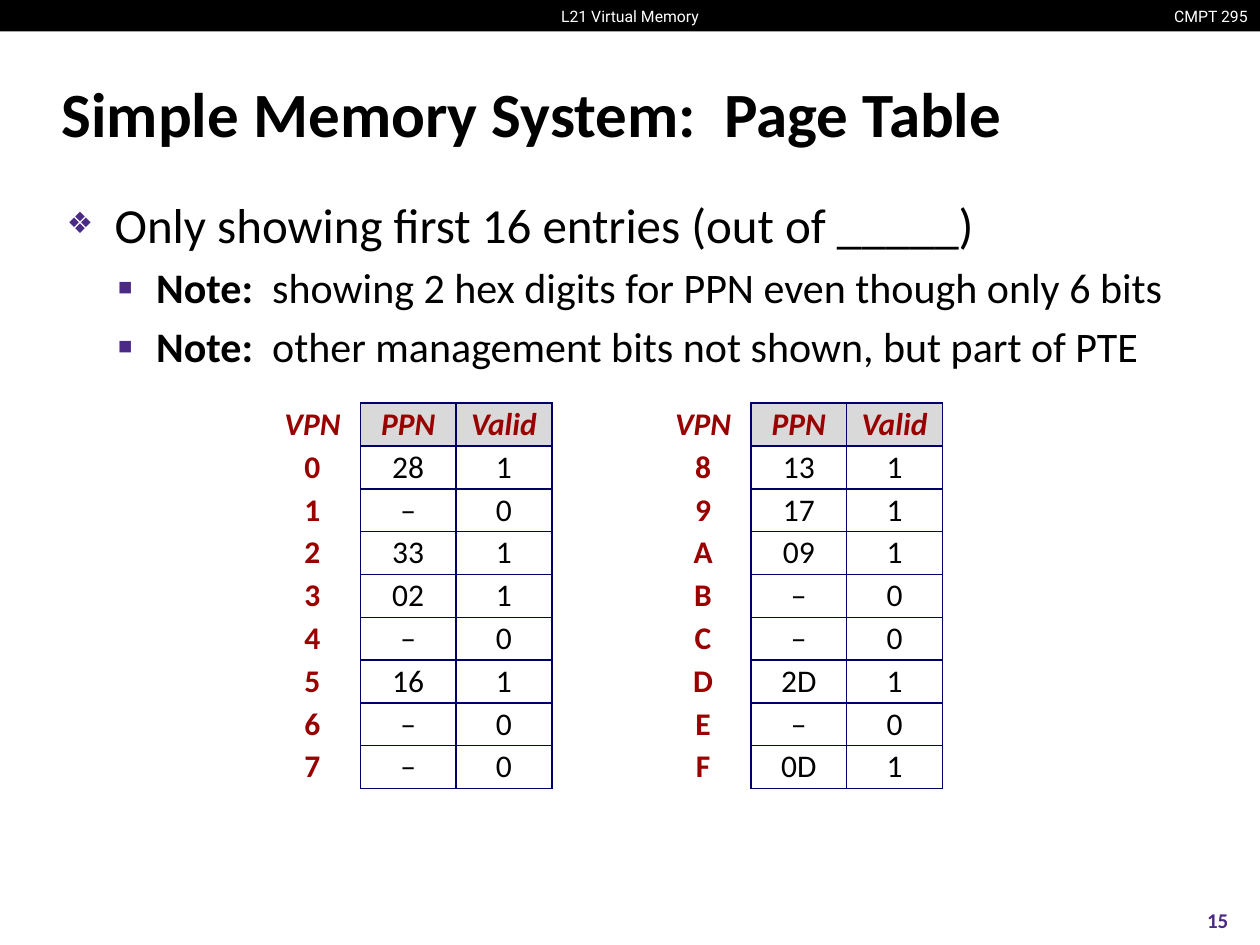
from lxml import etree
from pptx import Presentation, util as u
from pptx.dml.color import RGBColor
from pptx.enum import shapes, text
from pptx.oxml import ns

COLORS = {"black": "000000", "white": "FFFFFF", "purple": "4B2A85",
          "red": "990000", "navy": "000066", "gray": "D9D9D9"}
ALIGN = text.PP_ALIGN
MIDDLE = text.MSO_ANCHOR.MIDDLE
COLS, ROWS = 100, 75  # grid cells of 0.1 inch

BULLETS = [
    (0, [("Only showing first 16 entries (out of _____)", False)]),
    (1, [("Note:  ", True),
         ("showing 2 hex digits for PPN even though only 6 bits", False)]),
    (1, [("Note:", True),
         ("  other management bits not shown, but part of PTE", False)]),
]
# level: text size, left margin, hanging indent, bullet, bullet size in percent
LEVELS = [(28, 0.38, 0.38, "❖", 60), (24, 0.71, 0.31, "▪", 110)]
HEADINGS = ("VPN", "PPN", "Valid")
PPNS = ["28", "–", "33", "02", "–", "16", "–", "–",
        "13", "17", "09", "–", "–", "2D", "–", "0D"]


def rgb(name):
    return RGBColor.from_string(COLORS[name])


def child(parent, tag, **attrs):
    return etree.SubElement(parent, ns.qn(tag), attrs)


class Deck:
    """Holds the presentation, its style and the current slide."""

    def __init__(self, font):
        self.prs = Presentation()
        self.prs.slide_width, self.prs.slide_height = u.Inches(10), u.Inches(7.5)
        self.font = font
        self.s = self.prs.slides.add_slide(self.prs.slide_layouts[1])

    def box(self, col, row, cols, rows):
        """Turn grid cells into left, top, width and height."""
        w, h = self.prs.slide_width, self.prs.slide_height
        return [round(n) for n in (col * w / COLS, row * h / ROWS,
                                   cols * w / COLS, rows * h / ROWS)]

    def style(self, p, size, color="black", bold=False, italic=False, align=ALIGN.LEFT, font=None):
        p.alignment = align
        p.font.name, p.font.size = font or self.font, u.Pt(size)
        p.font.bold, p.font.italic = bold, italic
        p.font.color.rgb = rgb(color)

    def place(self, sp, area, anchor):
        sp.left, sp.top, sp.width, sp.height = self.box(*area)
        tf = sp.text_frame
        tf.auto_size, tf.word_wrap = text.MSO_AUTO_SIZE.NONE, True
        tf.vertical_anchor = anchor
        return tf

    def title(self, words, area):
        tf = self.place(self.s.shapes.title, area, MIDDLE)
        tf.text = words
        self.style(tf.paragraphs[0], 36, bold=True)

    def bullets(self, items, area):
        tf = self.place(self.s.placeholders[1], area, text.MSO_ANCHOR.TOP)
        for i, (level, runs) in enumerate(items):
            size, margin, hang, char, percent = LEVELS[level]
            p = tf.add_paragraph() if i else tf.paragraphs[0]
            p.level = level
            pPr = p._p.get_or_add_pPr()
            pPr.set("marL", str(u.Inches(margin)))
            pPr.set("indent", str(-u.Inches(hang)))
            child(child(pPr, "a:buClr"), "a:srgbClr", val=COLORS["purple"])
            child(pPr, "a:buSzPct", val=str(percent * 1000))
            child(pPr, "a:buChar", char=char)
            p.space_before = u.Pt(0.2 * size if i else 0)
            self.style(p, size)
            for words, bold in runs:
                r = p.add_run()
                r.text, r.font.bold = words, bold

    def bar(self, area, color):
        sp = self.s.shapes.add_shape(shapes.MSO_SHAPE.RECTANGLE, *self.box(*area))
        sp.shadow.inherit = False
        sp.fill.solid()
        sp.fill.fore_color.rgb = rgb(color)
        sp.line.fill.background()

    def label(self, words, area, size, **look):
        tf = self.place(self.s.shapes.add_textbox(*self.box(*area)), area, MIDDLE)
        p = tf.paragraphs[0]
        p.text = words
        self.style(p, size, **look)

    def borders(self, cell, sides):
        """Draw the named sides (L, R, T, B) of a cell and hide the others."""
        tcPr = cell._tc.get_or_add_tcPr()
        for side in "LRTB":
            ln = child(tcPr, f"a:ln{side}", w=str(u.Pt(1)))
            if side in sides:
                child(child(ln, "a:solidFill"), "a:srgbClr", val=COLORS["navy"])
            else:
                child(ln, "a:noFill")

    def table(self, rows, col, row, cell_cols, cell_rows):
        """Add a table whose first column holds row labels outside the frame."""
        n, m = len(rows), len(rows[0])
        area = self.box(col, row, m * cell_cols, n * cell_rows)
        tbl = self.s.shapes.add_table(n, m, *area).table
        tbl.horz_banding = False
        for i, values in enumerate(rows):
            for j, value in enumerate(values):
                cell = tbl.cell(i, j)
                cell.text = value
                cell.vertical_anchor = MIDDLE
                cell.margin_left = cell.margin_right = 0
                cell.margin_top = cell.margin_bottom = 0
                self.borders(cell, "LRTB" if j else "R")
                if i == 0 and j:
                    cell.fill.solid()
                    cell.fill.fore_color.rgb = rgb("gray")
                else:
                    cell.fill.background()
                head = i == 0 or j == 0
                self.style(cell.text_frame.paragraphs[0], 18, "red" if head else "black",
                           bold=head, italic=i == 0, align=ALIGN.CENTER)


def main():
    deck = Deck("Calibri")
    deck.bar((0, 0, COLS, 2.5), "black")
    deck.label("CMPT 295", (91.9, 0, 8.1, 2.5), 9, color="white",
               align=ALIGN.RIGHT, font="Roboto")
    deck.label("L21 Virtual Memory", (42, 0, 16, 2.5), 9, color="white",
               align=ALIGN.CENTER, font="Roboto")
    deck.title("Simple Memory System:  Page Table", (3.9, 4.8, 91.9, 8.3))
    deck.bullets(BULLETS, (4.3, 14.9, 91.5, 12))
    deck.label("15", (93.3, 71, 6.7, 4), 12, color="purple", bold=True, align=ALIGN.CENTER)

    entries = [(f"{vpn:X}", ppn, "0" if ppn == "–" else "1")
               for vpn, ppn in enumerate(PPNS)]
    half = len(entries) // 2
    for col, part in ((21, entries[:half]), (52, entries[half:])):
        deck.table([HEADINGS, *part], col, 32, 7.6, 3.4)
    deck.prs.save("out.pptx")


if __name__ == "__main__":
    main()
